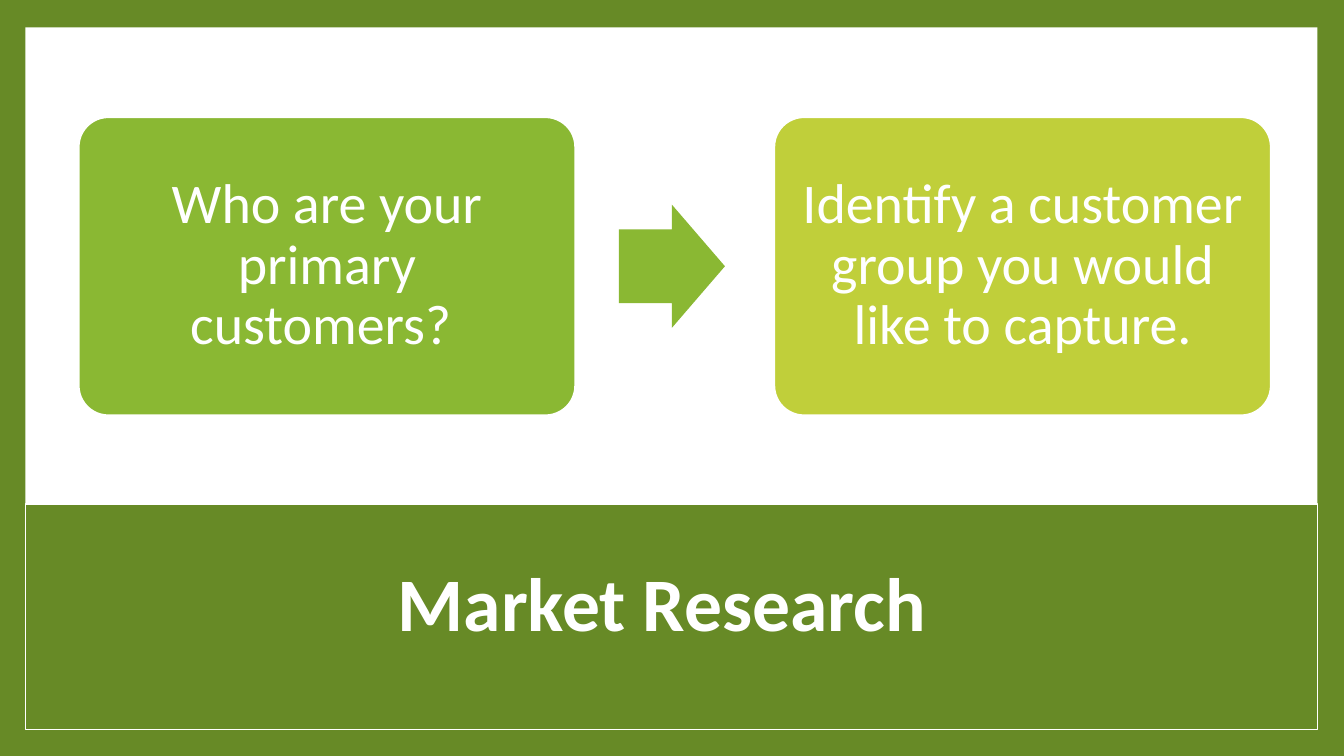
"""Build the Market Research slide: two linked cards above a title band."""
import pptx
import pptx.dml.color
import pptx.enum.shapes
import pptx.enum.text
import pptx.util

Cm = pptx.util.Cm
Pt = pptx.util.Pt
RGBColor = pptx.dml.color.RGBColor
Shapes = pptx.enum.shapes.MSO_SHAPE

WHITE = RGBColor(0xFF, 0xFF, 0xFF)
OLIVE = RGBColor(0x67, 0x8A, 0x26)
GREEN = RGBColor(0x8A, 0xB8, 0x33)
LIME = RGBColor(0xC0, 0xCF, 0x3A)

TITLE = "Market Research "
CARDS = [
    ("Who are your primary customers? ", GREEN),
    ("Identify a customer group you would like to capture.", LIME),
]

PAGE_WIDTH, PAGE_HEIGHT = 33.87, 19.05
PANEL_LEFT, PANEL_TOP, PANEL_WIDTH, PANEL_HEIGHT = 0.64, 0.69, 32.56, 17.7
BAND_TOP = 12.7
CARD_LEFT, CARD_TOP, CARD_WIDTH, CARD_HEIGHT = 1.98, 2.95, 12.52, 7.52
CARD_STEP = 17.53
ARROW_LEFT, ARROW_WIDTH, ARROW_HEIGHT = 15.6, 2.67, 3.1
TITLE_BOX = (3.18, 13.41, 27.43, 3.76)

TITLE_FONT = {"name": "Calibri", "size": Pt(54), "bold": True}
CARD_FONT = {"name": "Calibri", "size": Pt(40), "bold": False}


def add_shape(page, kind, place, fill, line_width=0, adjustments=()):
    shape = page.shapes.add_shape(kind, *map(Cm, place))
    shape.shadow.inherit = False
    shape.fill.solid()
    shape.fill.fore_color.rgb = fill
    if line_width:
        shape.line.color.rgb = WHITE
        shape.line.width = Pt(line_width)
    else:
        shape.line.fill.background()
    for index, value in enumerate(adjustments):
        shape.adjustments[index] = value
    return shape


def write(box, text, font, margin):
    frame = box.text_frame
    frame.word_wrap = True
    frame.vertical_anchor = pptx.enum.text.MSO_ANCHOR.MIDDLE
    for side in ("left", "top", "right", "bottom"):
        setattr(frame, f"margin_{side}", Cm(margin))
    para = frame.paragraphs[0]
    para.alignment = pptx.enum.text.PP_ALIGN.CENTER
    para.line_spacing = 0.9
    span = para.add_run()
    span.text = text
    for name, value in font.items():
        setattr(span.font, name, value)
    span.font.color.rgb = WHITE


def main():
    deck = pptx.Presentation()
    deck.slide_width, deck.slide_height = Cm(PAGE_WIDTH), Cm(PAGE_HEIGHT)
    page = deck.slides.add_slide(deck.slide_layouts[6])

    panel = (PANEL_LEFT, PANEL_TOP, PANEL_WIDTH, PANEL_HEIGHT)
    band_height = PANEL_TOP + PANEL_HEIGHT - BAND_TOP
    band = (PANEL_LEFT, BAND_TOP, PANEL_WIDTH, band_height)
    add_shape(page, Shapes.RECTANGLE, (0, 0, PAGE_WIDTH, PAGE_HEIGHT), OLIVE)
    add_shape(page, Shapes.RECTANGLE, panel, WHITE)
    add_shape(page, Shapes.RECTANGLE, band, OLIVE, 1)
    write(page.shapes.add_textbox(*map(Cm, TITLE_BOX)), TITLE, TITLE_FONT, 0.25)

    for index, (text, fill) in enumerate(CARDS):
        place = (CARD_LEFT + index * CARD_STEP, CARD_TOP, CARD_WIDTH, CARD_HEIGHT)
        card = add_shape(page, Shapes.ROUNDED_RECTANGLE, place, fill, 1.5, [0.1])
        write(card, text, CARD_FONT, 0.43)

    arrow_top = CARD_TOP + (CARD_HEIGHT - ARROW_HEIGHT) / 2
    arrow = (ARROW_LEFT, arrow_top, ARROW_WIDTH, ARROW_HEIGHT)
    add_shape(page, Shapes.RIGHT_ARROW, arrow, GREEN, adjustments=[0.6, 0.5])

    deck.save("out.pptx")


if __name__ == "__main__":
    main()
